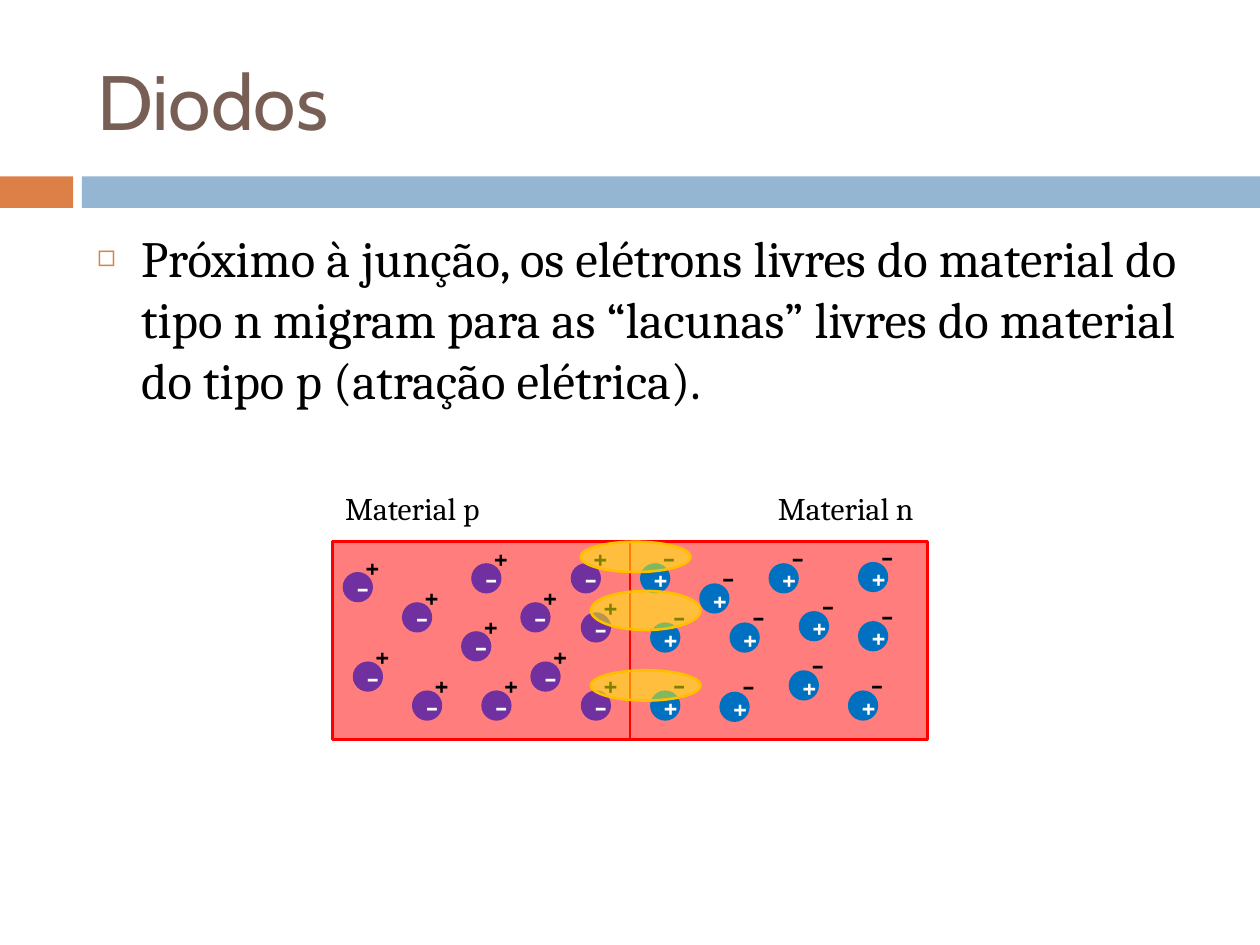
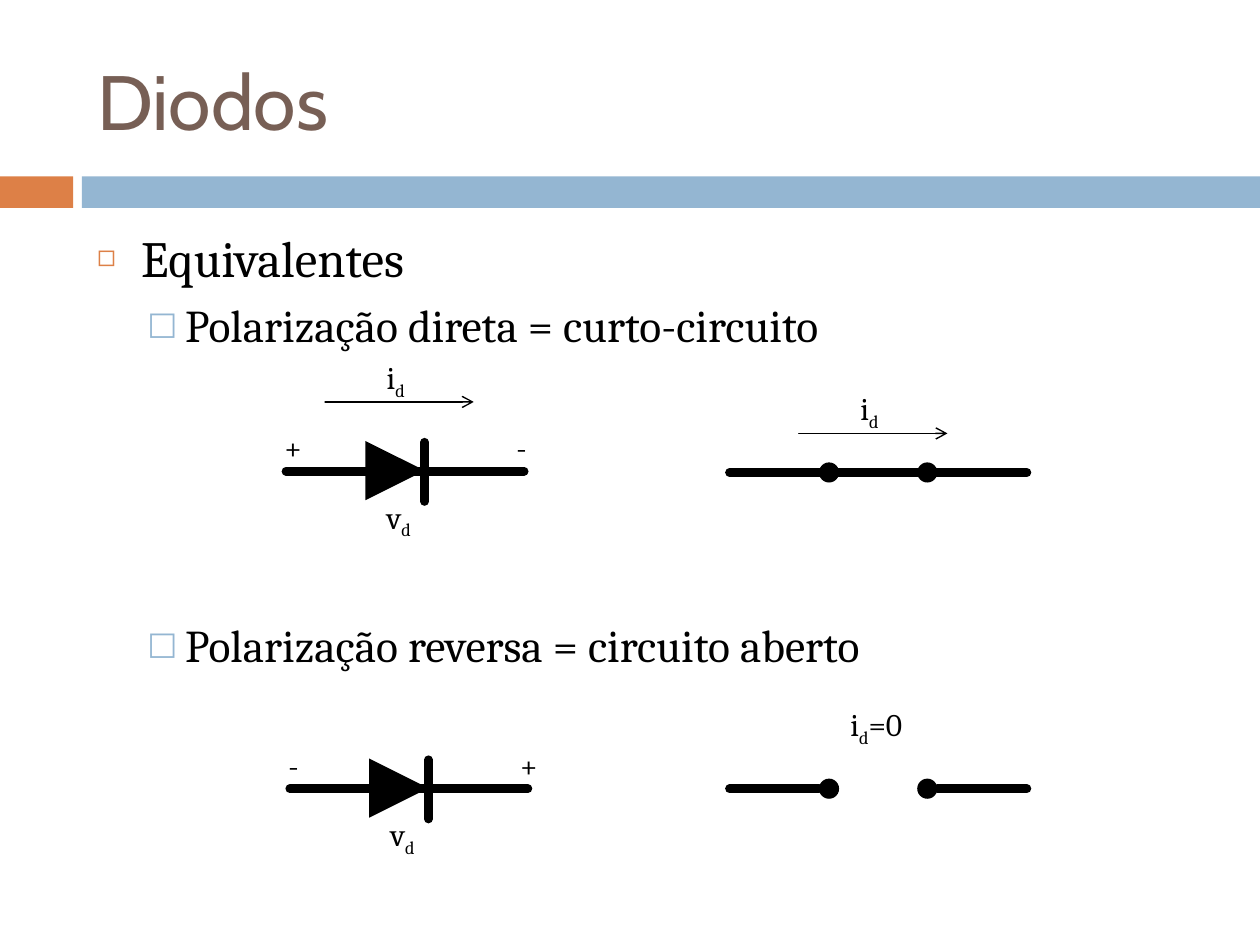
from lxml import etree
from pptx import Presentation
from pptx import util as u
from pptx.dml.color import RGBColor
from pptx.enum import shapes, text
from pptx.oxml import ns

ORANGE, BLUE, BROWN = "DD8047", "94B6D2", "775F55"
BLACK, WHITE = "000000", "FFFFFF"
PINK, RED = "FF7D7D", "FF0000"
YELLOW, GOLD = "FFFF00", "FFC000"
PURPLE, AZURE = "7030A0", "0070C0"
HEAD, BODY = "Cabin", "Cambria"

BULLETS = [
    dict(char="◻", tint=ORANGE, part=60, left=0.35, hang=0.35, size=29, gap=7),
    dict(char="□", tint=BLUE, part=70, left=0.7, hang=0.3, size=26, gap=5.5),
]

HOLES = [(2.8, 5.25), (3.27, 5.48), (2.72, 4.54), (3.19, 4.78), (3.66, 5.01),
         (3.82, 5.48), (4.21, 5.25), (3.74, 4.47), (4.61, 5.48), (4.53, 4.47),
         (4.61, 4.86), (4.13, 4.78)]
DONORS = [(5.16, 4.94), (5.16, 5.48), (5.08, 4.47), (5.55, 4.63), (5.79, 4.94),
          (5.71, 5.49), (6.26, 5.32), (6.1, 4.47), (6.73, 5.48), (6.81, 4.46),
          (6.81, 4.93), (6.34, 4.85)]
PAIRS = [(4.61, 4.3, 0.24), (4.69, 4.69, 0.31), (4.69, 5.32, 0.24)]


def rgb(code):
    return RGBColor.from_string(code)


def inch(*nums):
    return [u.Inches(n) for n in nums]


def put(item, **vals):
    for key, val in vals.items():
        setattr(item, key, val)


def node(base, tag, **vals):
    return etree.SubElement(base, ns.qn(tag), vals)


def style(run, size, face, tint):
    put(run.font, size=u.Pt(size), name=face, bold=False)
    run.font.color.rgb = rgb(tint)


def shape(slide, kind, box, fill, edge=None, alpha=None):
    item = slide.shapes.add_shape(kind, *inch(*box))
    item.shadow.inherit = False
    item.fill.solid()
    item.fill.fore_color.rgb = rgb(fill)
    if edge:
        item.line.color.rgb = rgb(edge)
        item.line.width = u.Pt(1.5)
    else:
        item.line.fill.background()
    if alpha:
        tint = item.fill._xPr.find(".//" + ns.qn("a:srgbClr"))
        node(tint, "a:alpha", val=str(alpha * 1000))
    return item


def rect(slide, box, fill, edge=None):
    return shape(slide, shapes.MSO_SHAPE.RECTANGLE, box, fill, edge)


def oval(slide, box, fill, edge=None, alpha=None):
    return shape(slide, shapes.MSO_SHAPE.OVAL, box, fill, edge, alpha)


def wire(slide, x1, y1, x2, y2, width=5, arrow=False):
    item = slide.shapes.add_connector(
        shapes.MSO_CONNECTOR.STRAIGHT, *inch(x1, y1, x2, y2))
    item.line.color.rgb = rgb(BLACK)
    item.line.width = u.Pt(width)
    edge = item.line._get_or_add_ln()
    edge.set("cap", "rnd")
    if arrow:
        node(edge, "a:tailEnd", type="arrow")
    node(item._element.spPr, "a:effectLst")


def label(slide, x, y, width, words, sub="", tail="", face=BODY, wrap=False,
          align=text.PP_ALIGN.LEFT):
    frame = slide.shapes.add_textbox(*inch(x, y, width, 0.4)).text_frame
    put(frame, word_wrap=wrap, auto_size=text.MSO_AUTO_SIZE.SHAPE_TO_FIT_TEXT)
    para = frame.paragraphs[0]
    para.alignment = align
    for part, base in ((words, 0), (sub, -25), (tail, 0)):
        if part:
            run = para.add_run()
            run.text = part
            style(run, 18, face, BLACK)
            if base:
                run._r.get_or_add_rPr().set("baseline", str(base * 1000))


def place(holder, box, words):
    put(holder, **dict(zip(("left", "top", "width", "height"), inch(*box))))
    holder.text_frame.text = words
    holder.text_frame.auto_size = text.MSO_AUTO_SIZE.NONE
    return holder.text_frame


def bullet(para, level, gap=None):
    look = BULLETS[level]
    put(para, level=level, space_before=u.Pt(gap or look["gap"]))
    props = para._p.get_or_add_pPr()
    props.set("marL", str(u.Inches(look["left"])))
    props.set("indent", str(-u.Inches(look["hang"])))
    node(node(props, "a:buClr"), "a:srgbClr", val=look["tint"])
    node(props, "a:buSzPct", val=str(look["part"] * 1000))
    node(props, "a:buFont", typeface=BODY)
    node(props, "a:buChar", char=look["char"])
    style(para.runs[0], look["size"], BODY, BLACK)


def page(deck, title, items):
    slide = deck.slides.add_slide(deck.slide_layouts[1])
    rect(slide, (0, 1.4, 0.58, 0.25), ORANGE)
    rect(slide, (0.65, 1.4, 9.35, 0.25), BLUE)
    frame = place(slide.shapes.title, (0.67, 0.25, 8.92, 1.08), title)
    frame.vertical_anchor = text.MSO_ANCHOR.MIDDLE
    para = frame.paragraphs[0]
    para.alignment = text.PP_ALIGN.LEFT
    style(para.runs[0], 44, HEAD, BROWN)
    frame = place(slide.placeholders[1], (0.67, 1.75, 8.92, 5.23),
                  "\n".join(item[0] for item in items))
    for para, item in zip(frame.paragraphs, items):
        bullet(para, *item[1:])
    return slide


def atom(slide, x, y, fill, core, free):
    frame = oval(slide, (x, y, 0.24, 0.24), fill).text_frame
    put(frame, word_wrap=True, vertical_anchor=text.MSO_ANCHOR.MIDDLE)
    para = frame.paragraphs[0]
    para.alignment = text.PP_ALIGN.CENTER
    run = para.add_run()
    run.text = core
    style(run, 18, HEAD, WHITE)
    label(slide, x + 0.08, y - 0.25, 0.24, free, face=HEAD, wrap=True)


def block(slide, x, fill, spots, core, free):
    rect(slide, (x, 4.3, 2.36, 1.57), PINK, RED)
    for spot in spots:
        atom(slide, *spot, fill, core, free)


def sign(slide, x, y, mark):
    label(slide, x, y, {"+": 0.34, "-": 0.29}[mark], mark)


def diode(slide, x, y, first, last):
    wire(slide, x, y, x + 1.89, y)
    tri = shape(slide, shapes.MSO_SHAPE.ISOSCELES_TRIANGLE,
                (x + 0.63, y - 0.24, 0.47, 0.47), BLACK)
    tri.rotation = 90
    wire(slide, x + 1.1, y - 0.23, x + 1.1, y + 0.24)
    label(slide, x + 0.7, y + 0.16, 0.41, "v", "d")
    sign(slide, x - 0.11, y - 0.39, first)
    sign(slide, x + 1.73, y - 0.39, last)


def flow(slide, x, y, shift):
    wire(slide, x, y, x + 1.18, y, 0.79, True)
    label(slide, x + shift, y - 0.4, 0.37, "i", "d")


def dots(slide, y):
    for x in (6.5, 7.28):
        oval(slide, (x, y - 0.08, 0.16, 0.16), BLACK)


def main():
    deck = Presentation()
    put(deck, slide_width=u.Inches(10), slide_height=u.Inches(7.5))

    slide = page(deck, "Diodos", [(
        "Próximo à junção, os elétrons livres do material do tipo n migram "
        "para as “lacunas” livres do material do tipo p (atração elétrica).",
        0)])
    block(slide, 2.64, PURPLE, HOLES, "-", "+")
    block(slide, 5, AZURE, DONORS, "+", "-")
    label(slide, 2.64, 3.83, 1.31, "Material p")
    label(slide, 6.02, 3.83, 1.33, "Material n", align=text.PP_ALIGN.RIGHT)
    for x, y, height in PAIRS:
        oval(slide, (x, y, 0.87, height), YELLOW, GOLD, 50)

    slide = page(deck, "Diodos", [
        ("Equivalentes", 0),
        ("Polarização direta = curto-circuito", 1),
        ("Polarização reversa = circuito aberto", 1, 151.6)])
    diode(slide, 2.27, 3.74, "+", "-")
    flow(slide, 2.58, 3.19, 0.39)
    diode(slide, 2.3, 6.26, "-", "+")
    wire(slide, 5.79, 3.75, 8.15, 3.75)
    dots(slide, 3.75)
    flow(slide, 6.34, 3.44, 0.39)
    for x in (5.79, 7.44):
        wire(slide, x, 6.26, x + 0.71, 6.26)
    dots(slide, 6.26)
    label(slide, 6.65, 5.55, 0.65, "i", "d", "=0")

    deck.save("out.pptx")


if __name__ == "__main__":
    main()
